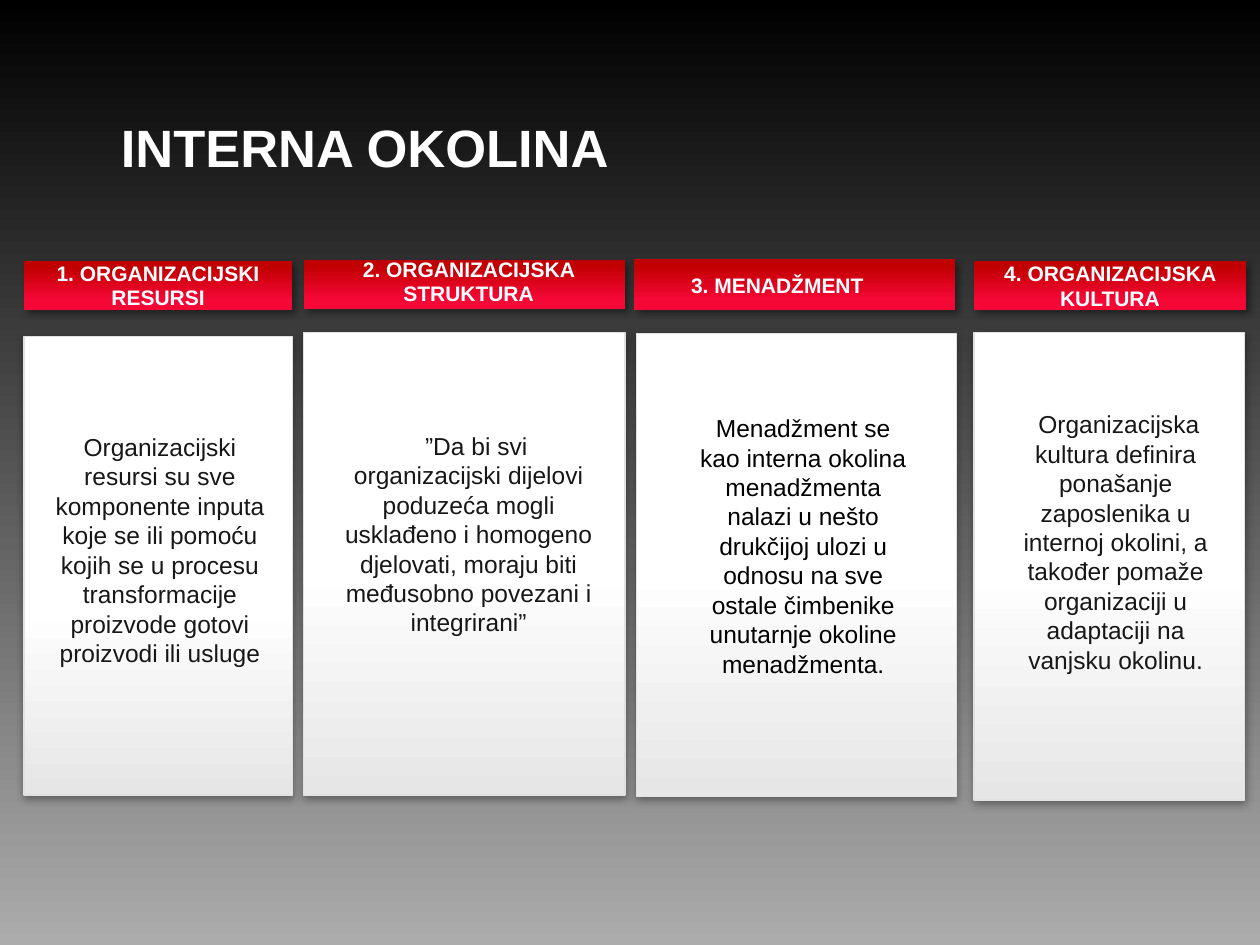
from lxml import etree
from pptx import Presentation
from pptx.dml.color import RGBColor
from pptx.enum.shapes import MSO_SHAPE
from pptx.enum.text import MSO_ANCHOR, PP_ALIGN
from pptx.oxml.ns import qn
from pptx.util import Inches, Pt

RECT = MSO_SHAPE.RECTANGLE
TOP, MIDDLE = MSO_ANCHOR.TOP, MSO_ANCHOR.MIDDLE
LEFT, CENTER = PP_ALIGN.LEFT, PP_ALIGN.CENTER

BLACK = RGBColor(0x00, 0x00, 0x00)
WHITE = RGBColor(0xFF, 0xFF, 0xFF)
INK = RGBColor(0x17, 0x17, 0x17)
GRAY = RGBColor(0xAC, 0xAC, 0xAC)
PALE = RGBColor(0xE6, 0xE6, 0xE6)
EDGE = RGBColor(0xE1, 0xE1, 0xE1)
ROSE = RGBColor(0xF5, 0x07, 0x36)
RED = RGBColor(0xC0, 0x00, 0x00)

BAND_STOPS = [(11, ROSE), (20, ROSE), (89, RED)]
BAND_SHADE = (40, 4, 3, 45)
CARD_SHADE = (35, 5, 1.8, 90)

COLUMNS = [
    {
        "band": (0.19, 2.07, 2.13, 0.39),
        "card": (0.19, 2.67, 2.13, 3.64),
        "head": (0.19, 2.08, 2.13, 0.38),
        "body": (0.34, 3.38, 1.86, 1.99),
        "title": "1. ORGANIZACIJSKI RESURSI",
        "text": "Organizacijski resursi su sve komponente inputa koje se ili "
                "pomoću kojih se u procesu transformacije proizvode gotovi "
                "proizvodi ili usluge",
        "mid": 41,
    },
    {
        "band": (2.41, 2.06, 2.55, 0.39),
        "card": (2.41, 2.64, 2.55, 3.67),
        "head": (2.64, 2.16, 2.16, 0.17),
        "body": (2.64, 3.37, 2.16, 1.75),
        "title": "2. ORGANIZACIJSKA STRUKTURA",
        "text": "”Da bi svi organizacijski dijelovi poduzeća mogli usklađeno "
                "i homogeno djelovati, moraju biti međusobno povezani i "
                "integrirani”",
        "indent": 0.12,
    },
    {
        "band": (5.03, 2.06, 2.55, 0.4),
        "card": (5.05, 2.65, 2.54, 3.67),
        "head": (5.21, 2.19, 1.92, 0.17),
        "body": (5.42, 3.23, 1.91, 2.22),
        "title": "3. MENADŽMENT",
        "text": "Menadžment se kao interna okolina menadžmenta nalazi u nešto "
                "drukčijoj ulozi u odnosu na sve ostale čimbenike unutarnje "
                "okoline menadžmenta.",
        "color": BLACK,
    },
    {
        "band": (7.73, 2.07, 2.16, 0.39),
        "card": (7.73, 2.64, 2.15, 3.71),
        "head": (7.73, 2.07, 2.16, 0.39),
        "body": (7.94, 3.2, 1.83, 2.46),
        "title": "4. ORGANIZACIJSKA KULTURA",
        "text": "Organizacijska kultura definira ponašanje zaposlenika u "
                "internoj okolini, a također pomaže organizaciji u adaptaciji "
                "na vanjsku okolinu.",
        "indent": 0.05,
        "space": 1,
    },
]


def add_node(parent, tag, **attrs):
    node = etree.SubElement(parent, qn(tag))
    for name, value in attrs.items():
        node.set(name, str(value))
    return node


def set_grad(fill, owner, stops):
    fill.gradient()
    fill.gradient_angle = 90
    items = owner.element.xpath(".//a:gsLst")[0]
    for old in list(items):
        items.remove(old)
    for place, color in stops:
        stop = add_node(items, "a:gs", pos=place * 1000)
        add_node(stop, "a:srgbClr", val=color)


def add_panel(slide, box, stops, shade, edge=None):
    panel = slide.shapes.add_shape(RECT, *map(Inches, box))
    set_grad(panel.fill, panel, stops)
    if edge is None:
        panel.line.fill.background()
    else:
        panel.line.color.rgb = edge
        panel.line.width = Pt(0.75)
    panel.shadow.inherit = False
    alpha, blur, dist, angle = shade
    effects = panel.element.xpath(".//a:effectLst")[0]
    shadow = add_node(effects, "a:outerShdw", blurRad=Pt(blur), dist=Pt(dist),
                      dir=angle * 60000, algn="tl", rotWithShape=0)
    tint = add_node(shadow, "a:srgbClr", val=BLACK)
    add_node(tint, "a:alpha", val=alpha * 1000)


def add_text(slide, box, text, size, color, bold=False, align=CENTER,
             anchor=MIDDLE, side=0, space=0.95, indent=0):
    frame = slide.shapes.add_textbox(*map(Inches, box)).text_frame
    frame.word_wrap = True
    frame.vertical_anchor = anchor
    frame.margin_left = frame.margin_right = Inches(side)
    frame.margin_top = frame.margin_bottom = Inches(0.05)
    para = frame.paragraphs[0]
    para.alignment = align
    para.line_spacing = float(space)
    if indent:
        props = para._p.get_or_add_pPr()
        props.set("marL", "0")
        props.set("indent", str(Inches(indent)))
    run = para.add_run()
    run.text = text
    run.font.name = "Arial"
    run.font.size = Pt(size)
    run.font.bold = bold
    run.font.color.rgb = color


def add_column(slide, col):
    add_panel(slide, col["band"], BAND_STOPS, BAND_SHADE)
    stops = [(0, PALE), (col.get("mid", 49), WHITE), (100, WHITE)]
    add_panel(slide, col["card"], stops, CARD_SHADE, EDGE)
    add_text(slide, col["head"], col["title"], 12, WHITE, bold=True,
             space=col.get("space", 0.95))
    add_text(slide, col["body"], col["text"], 14, col.get("color", INK),
             anchor=TOP, side=0.1, space=1, indent=col.get("indent", 0))


def main():
    deck = Presentation()
    deck.slide_width = Inches(10)
    deck.slide_height = Inches(7.5)
    slide = deck.slides.add_slide(deck.slide_layouts[6])
    set_grad(slide.background.fill, slide, [(0, GRAY), (100, BLACK)])
    add_text(slide, (0.96, 0.86, 5.31, 0.66), "INTERNA OKOLINA", 30, WHITE,
             bold=True, align=LEFT)
    for col in COLUMNS:
        add_column(slide, col)
    deck.save("out.pptx")


if __name__ == "__main__":
    main()
